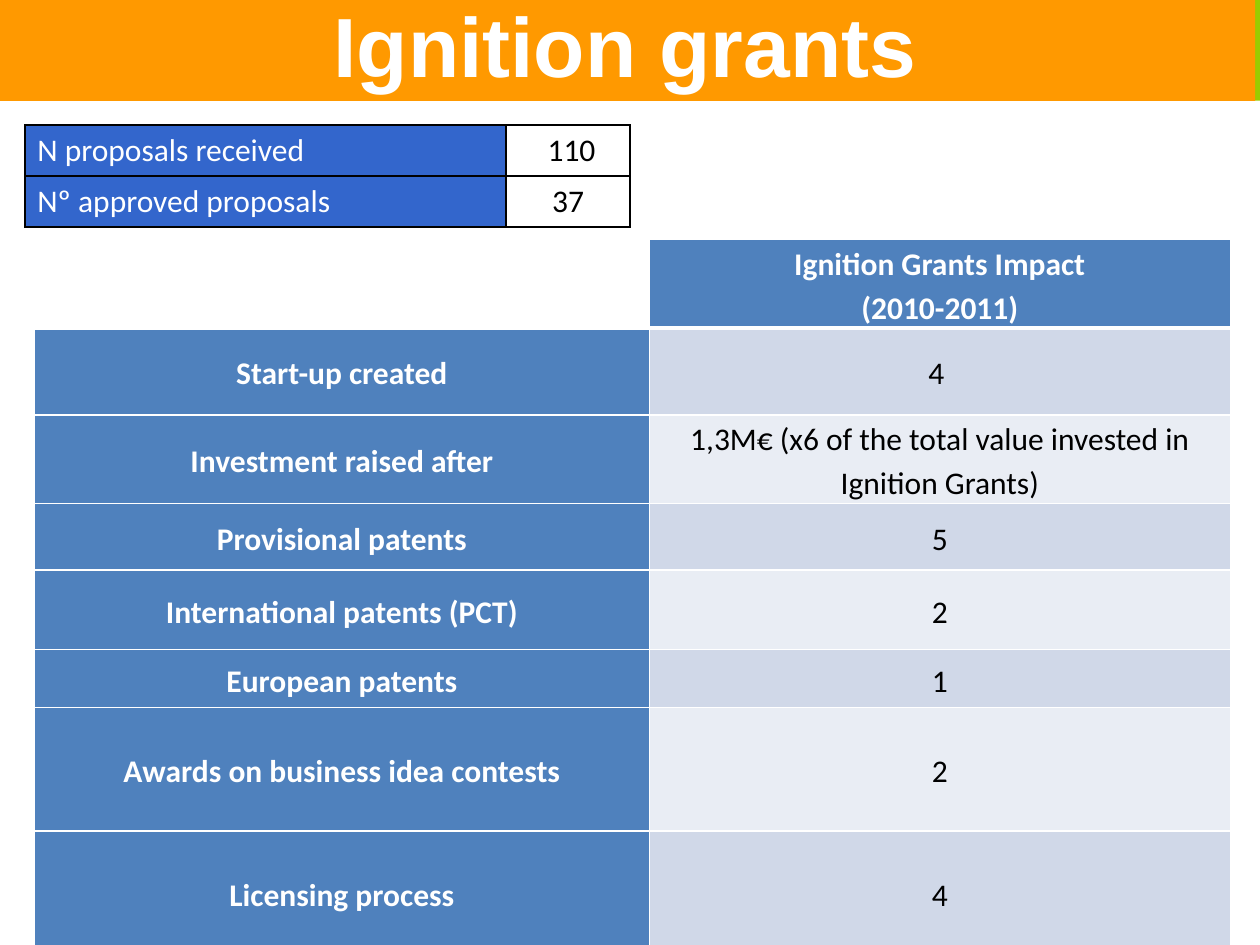
import lxml.etree
import pptx
import pptx.dml.color
import pptx.enum.shapes
import pptx.enum.text
import pptx.oxml.ns
import pptx.util

Pt = pptx.util.Pt
ALIGN = pptx.enum.text.PP_ALIGN
ANCHOR = pptx.enum.text.MSO_ANCHOR
COLORS = {
    "green": "99CC00",
    "orange": "FF9900",
    "royal": "3366CC",
    "steel": "4F81BD",
    "band_dark": "D0D8E8",
    "band_light": "E9EDF4",
    "white": "FFFFFF",
    "black": "000000",
}
PROPOSALS = [("N proposals received", " 110"), ("Nº approved proposals", "37")]
IMPACT = [
    ("", "Ignition Grants Impact\n(2010-2011)", 49.7),
    ("Start-up created", "4 ", 49.7),
    ("Investment raised after",
     "1,3M€ (x6 of the total value invested in Ignition Grants)", 49.7),
    ("Provisional patents", "5", 38.2),
    ("International patents (PCT)", "2", 45.4),
    ("European patents", "1", 33.1),
    ("Awards on business idea contests", "2", 70.6),
    ("Licensing process", "4", 70.6),
]


def paint(fill, color):
    """Give a fill one solid colour from the palette."""
    fill.solid()
    fill.fore_color.rgb = pptx.dml.color.RGBColor.from_string(COLORS[color])


def write(frame, text, *, color="black", size=18, font="Calibri", bold=False,
          align=ALIGN.CENTER, spacing=1.0):
    """Fill a text frame, one paragraph per line of text."""
    frame.text = text
    for para in frame.paragraphs:
        para.alignment = align
        para.line_spacing = spacing
        para.font.size = Pt(size)
        for span in para.runs:
            span.font.name = font
            span.font.size = Pt(size)
            span.font.bold = bold
            span.font.color.rgb = pptx.dml.color.RGBColor.from_string(COLORS[color])


def draw_borders(cell, color, **widths):
    """Draw the four borders of a cell, 1 pt unless a side is given a width."""
    properties = cell._tc.get_or_add_tcPr()
    for side in "LRTB":
        line = lxml.etree.SubElement(
            properties, pptx.oxml.ns.qn(f"a:ln{side}"), w=str(Pt(widths.get(side, 1))))
        solid = lxml.etree.SubElement(line, pptx.oxml.ns.qn("a:solidFill"))
        lxml.etree.SubElement(solid, pptx.oxml.ns.qn("a:srgbClr"), val=COLORS[color])


def add_grid(page, left, top, widths, heights):
    """Add a plain table with the given column widths and row heights."""
    table = page.shapes.add_table(
        len(heights), len(widths), Pt(left), Pt(top),
        Pt(sum(widths)), Pt(sum(heights))).table
    table.first_row = table.horz_banding = False
    for column, width in zip(table.columns, widths):
        column.width = Pt(width)
    for row, height in zip(table.rows, heights):
        row.height = Pt(height)
    return table


def add_header(page, left, top, width, height):
    """Place the orange title bar over the green strip."""
    strip = page.shapes.add_shape(
        pptx.enum.shapes.MSO_SHAPE.RECTANGLE, 0, 0, Pt(width), Pt(top + height))
    strip.shadow.inherit = False
    paint(strip.fill, "green")
    strip.line.fill.background()

    title = page.shapes.title
    title.left, title.top = Pt(left), Pt(top)
    title.width, title.height = Pt(width), Pt(height)
    paint(title.fill, "orange")
    frame = title.text_frame
    frame.auto_size = pptx.enum.text.MSO_AUTO_SIZE.NONE
    frame.vertical_anchor = ANCHOR.BOTTOM
    write(frame, "Ignition grants", color="white", size=48, font="Arial", bold=True)
    strip.element.addnext(title.element)


def add_proposals(page, left, top, width, height):
    """Place the table that counts the proposals."""
    label_width = 275
    table = add_grid(page, left, top, [label_width, width - label_width],
                     [height / len(PROPOSALS)] * len(PROPOSALS))
    for row, (label, count) in zip(table.rows, PROPOSALS):
        label_cell, count_cell = row.cells
        for cell, color in ((label_cell, "royal"), (count_cell, "white")):
            draw_borders(cell, "black")
            paint(cell.fill, color)
        write(label_cell.text_frame, label, color="white", align=ALIGN.LEFT)
        write(count_cell.text_frame, count)


def add_impact(page, left, top, width):
    """Place the table of grant results with alternating value bands."""
    label_width = 351.4
    table = add_grid(page, left, top, [label_width, width - label_width],
                     [height for _, _, height in IMPACT])
    for index, (label, value, _) in enumerate(IMPACT):
        is_header = index == 0
        band = "band_dark" if index % 2 else "band_light"
        fills = ("white", "steel") if is_header else ("steel", band)
        for column, text in enumerate((label, value)):
            cell = table.cell(index, column)
            cell.margin_left = cell.margin_right = Pt(5.76)
            cell.margin_top = cell.margin_bottom = 0
            cell.vertical_anchor = ANCHOR.MIDDLE
            draw_borders(cell, "white", T=3 if index == 1 else 1, B=3 if is_header else 1)
            paint(cell.fill, fills[column])
            strong = is_header or column == 0
            write(cell.text_frame, text, color="white" if strong else "black",
                  bold=strong, spacing=1.15)


def main():
    """Build the slide and save the deck."""
    deck = pptx.Presentation()
    deck.slide_width, deck.slide_height = Pt(720), Pt(540)
    page = deck.slides.add_slide(deck.slide_layouts.get_by_name("Title Only"))
    add_header(page, -2.7, -7.9, 720, 65.5)
    add_proposals(page, 14.2, 71.3, 345.8, 58.4)
    add_impact(page, 19.7, 136.8, 683.4)
    deck.save("out.pptx")


if __name__ == "__main__":
    main()
